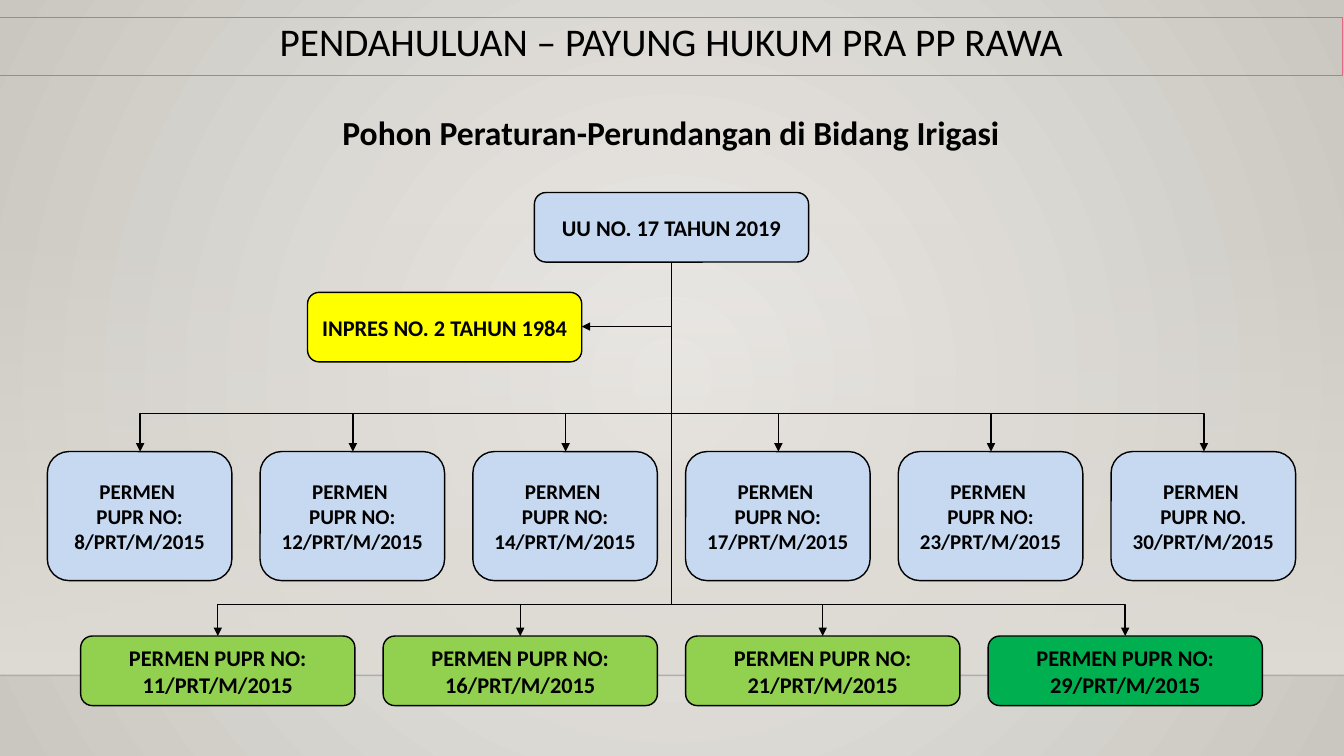
"""Build a slide with the tree of irrigation regulations."""
from lxml import etree
from pptx import Presentation
from pptx.dml.color import RGBColor
from pptx.enum.shapes import MSO_CONNECTOR, MSO_SHAPE
from pptx.enum.text import MSO_ANCHOR, MSO_AUTO_SIZE, PP_ALIGN
from pptx.oxml.ns import qn
from pptx.util import Pt

RECT, ROUND = MSO_SHAPE.RECTANGLE, MSO_SHAPE.ROUNDED_RECTANGLE
STRAIGHT, ELBOW = MSO_CONNECTOR.STRAIGHT, MSO_CONNECTOR.ELBOW
TOP, MIDDLE = MSO_ANCHOR.TOP, MSO_ANCHOR.MIDDLE
CENTER, NO_FIT = PP_ALIGN.CENTER, MSO_AUTO_SIZE.NONE
PX = 9144
W, H = 1333, 750
TRUNK_X, TRUNK_Y = 666, 260
BLUE, YELLOW, LIME, GREEN = "C6D9F1", "FFFF00", "92D050", "00B050"
rgb = RGBColor.from_string


def write(tf, lines, size, bold, anchor):
    """Fill a text frame with centred lines."""
    frame = {"word_wrap": True, "auto_size": NO_FIT, "vertical_anchor": anchor}
    for name, value in frame.items():
        setattr(tf, name, value)
    for i, line in enumerate(lines):
        p = tf.paragraphs[0] if i == 0 else tf.add_paragraph()
        p.alignment = CENTER
        r = p.add_run()
        r.text = line
        for name, value in {"name": "Calibri", "size": Pt(size), "bold": bold}.items():
            setattr(r.font, name, value)
        r.font.color.rgb = rgb("000000")


def connect(kind, x1, y1, x2, y2, color):
    """Draw a one-point connector without a shadow."""
    c = s.shapes.add_connector(kind, *(int(v * PX) for v in (x1, y1, x2, y2)))
    c.line.color.rgb = rgb(color)
    c.line.width = Pt(1)
    etree.SubElement(c.element.spPr, qn("a:effectLst"))
    return c


prs = Presentation()
prs.slide_width, prs.slide_height = W * PX, H * PX
s = prs.slides.add_slide(prs.slide_layouts[5])

bg = s.background.fill
bg.gradient()
for stop, color in zip(bg.gradient_stops, ("ECEAE7", "CAC7C1")):
    stop.color.rgb = rgb(color)
lin = next(s.element.iter(qn("a:lin")))
circle = etree.Element(qn("a:path"), path="circle")
etree.SubElement(circle, qn("a:fillToRect"), l="50000", t="50000", r="50000", b="50000")
lin.getparent().replace(lin, circle)

band = s.shapes.add_shape(RECT, 0, 221 * PX, W * PX, 449 * PX)
band.shadow.inherit = False
band.line.fill.background()
band.fill.gradient()
band.fill.gradient_angle = 270
for stop in band.fill.gradient_stops:
    stop.color.rgb = rgb("DFDBD5")
clear = next(band.element.spPr.iter(qn("a:srgbClr")))
etree.SubElement(clear, qn("a:alpha"), val="0")

floor = connect(STRAIGHT, 0, 670, W, 670, "000001")
tint = next(floor.element.spPr.iter(qn("a:srgbClr")))
etree.SubElement(tint, qn("a:alpha"), val="20000")

title = s.shapes.title
place = {"left": -1, "top": 17, "width": W, "height": 58}
for name, value in place.items():
    setattr(title, name, value * PX)
title.line.color.rgb = rgb("E66684")
title.line.width = Pt(0.75)
write(title.text_frame, ["PENDAHULUAN – PAYUNG HUKUM PRA PP RAWA"], 28, False, TOP)
p = title.text_frame.paragraphs[0]
p.line_spacing, p.space_after = 0.9, Pt(6)

boxes = [
    (["UU NO. 17 TAHUN 2019"], 530, 191, 272, 69, BLUE, 16),
    (["INPRES NO. 2 TAHUN 1984"], 305, 290, 272, 69, YELLOW, 16),
]
arrows = []
upper = ["NO: 8", "NO: 12", "NO: 14", "NO: 17", "NO: 23", "NO. 30"]
for i, number in enumerate(upper):
    x = 47 + 211 * i
    boxes.append((["PERMEN ", f"PUPR {number}/PRT/M/2015"], x, 448, 183, 128, BLUE, 15))
    arrows.append((x + 92, 448, 410))
lower = [(11, LIME), (16, LIME), (21, LIME), (29, GREEN)]
for i, (number, color) in enumerate(lower):
    x = 80 + 300 * i
    boxes.append((["PERMEN PUPR NO:", f"{number}/PRT/M/2015"], x, 631, 272, 69, color, 16))
    arrows.append((x + 136, 631, 600))

for lines, x, y, w, h, color, size in boxes:
    sp = s.shapes.add_shape(ROUND, x * PX, y * PX, w * PX, h * PX)
    sp.shadow.inherit = False
    sp.fill.solid()
    sp.fill.fore_color.rgb = rgb(color)
    sp.line.color.rgb = rgb("000000")
    sp.line.width = Pt(1)
    write(sp.text_frame, lines, size, True, MIDDLE)

for x, y, bar in [(577, 324, None)] + arrows:
    drop, reach = y - TRUNK_Y, abs(x - TRUNK_X)
    left = (x + TRUNK_X - drop) / 2
    top = (y + TRUNK_Y - reach) / 2
    ends = [left, left + drop]
    if x > TRUNK_X:
        ends.reverse()
    c = connect(ELBOW, ends[0], top, ends[1], top + reach, "000000")
    turn = 270 if x > TRUNK_X else 90
    c.element.spPr.find(qn("a:xfrm")).set("rot", str(turn * 60000))
    geom = c.element.spPr.find(qn("a:prstGeom"))
    if bar is None:
        geom.set("prst", "bentConnector2")
    else:
        share = round((bar - TRUNK_Y) / drop * 100000)
        etree.SubElement(geom.find(qn("a:avLst")), qn("a:gd"), name="adj1", fmla=f"val {share}")
    etree.SubElement(c.element.spPr.find(qn("a:ln")), qn("a:tailEnd"), type="triangle")

heading = s.shapes.add_textbox(285 * PX, 106 * PX, 761 * PX, 50 * PX)
write(heading.text_frame, ["Pohon Peraturan-Perundangan di Bidang Irigasi"], 24, True, TOP)

prs.save("out.pptx")
